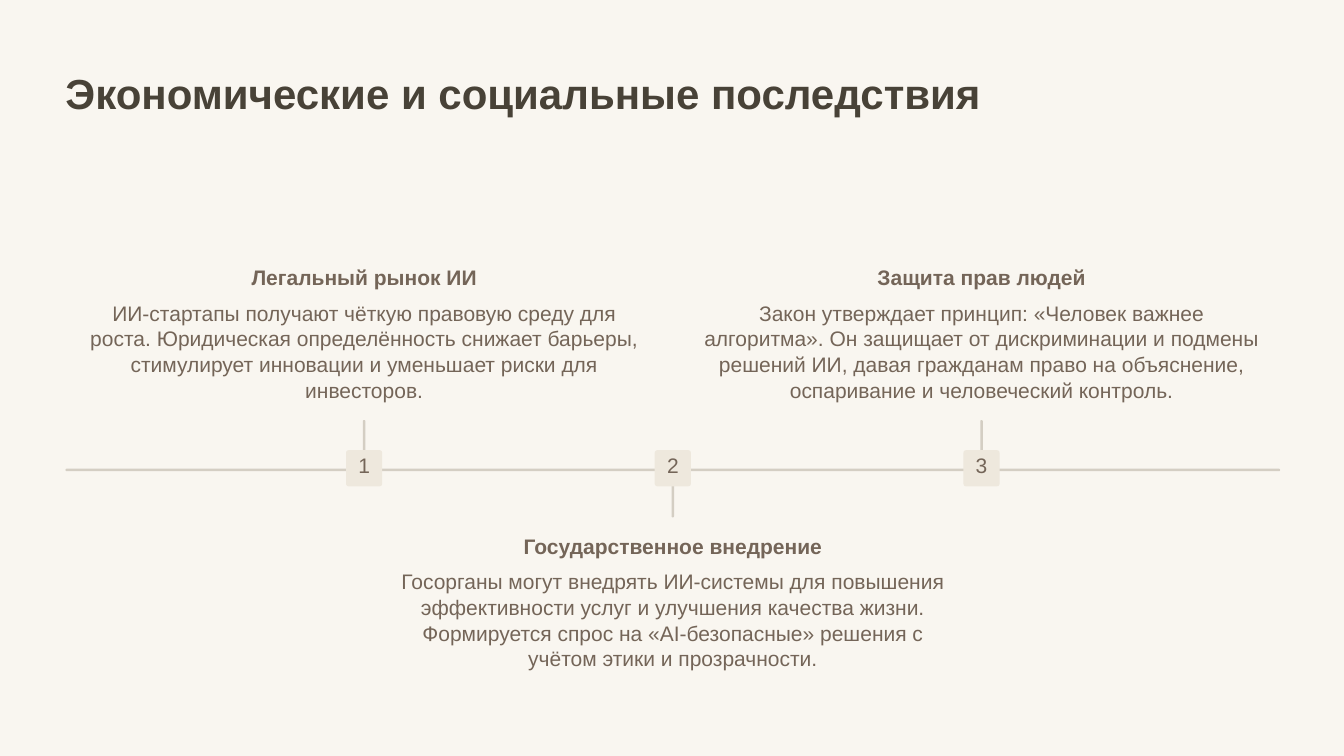
"""Build a slide with a three-step timeline on the effects of AI law."""
from dataclasses import dataclass

from pptx import Presentation
from pptx.dml.color import RGBColor as Rgb
from pptx.enum.shapes import MSO_SHAPE as Form
from pptx.enum.text import PP_ALIGN as Align
from pptx.slide import Slide
from pptx.util import Inches, Pt

COLS, ROWS, CELL = 160, 90, Inches(0.1)


@dataclass(frozen=True)
class Theme:
    font: str = "Arial"
    back: str = "F9F6F0"
    line: str = "D4CEC3"
    badge: str = "EEE8DD"
    title: str = "484237"
    text: str = "746558"
    big: int = 36
    small: int = 18


@dataclass(frozen=True)
class Box:
    x: float
    y: float
    w: float
    h: float

    def spans(self) -> list[int]:
        return [round(n * CELL) for n in (self.x, self.y, self.w, self.h)]


@dataclass(frozen=True)
class Style:
    size: int
    color: str
    lead: float
    bold: bool = False
    align: Align = Align.CENTER


@dataclass(frozen=True)
class Step:
    head: str
    body: str
    rows: float
    above: bool = True


THEME = Theme()
TITLE = Style(THEME.big, THEME.title, 43, bold=True, align=Align.LEFT)
HEAD = Style(THEME.small, THEME.text, 21.5, bold=True)
BODY = Style(THEME.small, THEME.text, 22)
DIGIT = Style(THEME.small, THEME.text, 20.5)

LEFT, AXIS, THIN = 7.8, 55.8, 0.3
MID, PITCH, STEM, BADGE = 80.1, 36.75, 5.8, 4.3

STEPS = (
    Step("Легальный рынок ИИ",
         "ИИ-стартапы получают чёткую правовую среду для роста. "
         "Юридическая определённость снижает барьеры, стимулирует "
         "инновации и уменьшает риски для инвесторов.", 9.3),
    Step("Государственное внедрение",
         "Госорганы могут внедрять ИИ-системы для повышения эффективности "
         "услуг и улучшения качества жизни. Формируется спрос на "
         "«AI-безопасные» решения с учётом этики и прозрачности.", 9.3,
         above=False),
    Step("Защита прав людей",
         "Закон утверждает принцип: «Человек важнее алгоритма». Он защищает "
         "от дискриминации и подмены решений ИИ, давая гражданам право на "
         "объяснение, оспаривание и человеческий контроль.", 12.3),
)


def centre(mid: float, y: float, w: float, h: float) -> Box:
    return Box(mid - w / 2, y, w, h)


def block(slide: Slide, box: Box, color: str, curve: float = 0.5) -> None:
    shape = slide.shapes.add_shape(Form.ROUNDED_RECTANGLE, *box.spans())
    shape.adjustments[0] = curve
    shape.shadow.inherit = False
    shape.fill.solid()
    shape.fill.fore_color.rgb = Rgb.from_string(color)
    shape.line.fill.background()


def write(slide: Slide, box: Box, text: str, style: Style) -> None:
    frame = slide.shapes.add_textbox(*box.spans()).text_frame
    frame.margin_left = frame.margin_right = 0
    frame.margin_top = frame.margin_bottom = 0
    frame.word_wrap = True
    par = frame.paragraphs[0]
    par.text = text
    par.alignment = style.align
    par.line_spacing = Pt(style.lead)
    par.font.name = THEME.font
    par.font.size = Pt(style.size)
    par.font.bold = style.bold
    par.font.color.rgb = Rgb.from_string(style.color)


def draw(slide: Slide, step: Step, rank: int) -> None:
    mid = MID + (rank - 2) * PITCH
    stem = AXIS - STEM if step.above else AXIS
    top = 31.55 if step.above else 63.5
    block(slide, centre(mid, stem, THIN, STEM), THEME.line)
    block(slide, centre(mid, 53.6, BADGE, BADGE), THEME.badge, 0.07)
    write(slide, centre(mid, 54, 2.9, 3.6), str(rank), DIGIT)
    write(slide, centre(mid, top, 42, 3), step.head, HEAD)
    write(slide, centre(mid, top + 4.15, 67.2, step.rows), step.body, BODY)


def main() -> None:
    deck = Presentation()
    deck.slide_width, deck.slide_height = COLS * CELL, ROWS * CELL
    slide = deck.slides.add_slide(deck.slide_layouts[6])
    slide.background.fill.solid()
    slide.background.fill.fore_color.rgb = Rgb.from_string(THEME.back)
    write(slide, Box(LEFT, 8.1, 125, 6),
          "Экономические и социальные последствия", TITLE)
    block(slide, Box(LEFT, AXIS, 144.6, THIN), THEME.line)
    for rank, step in enumerate(STEPS, 1):
        draw(slide, step, rank)
    deck.save("out.pptx")


if __name__ == "__main__":
    main()
